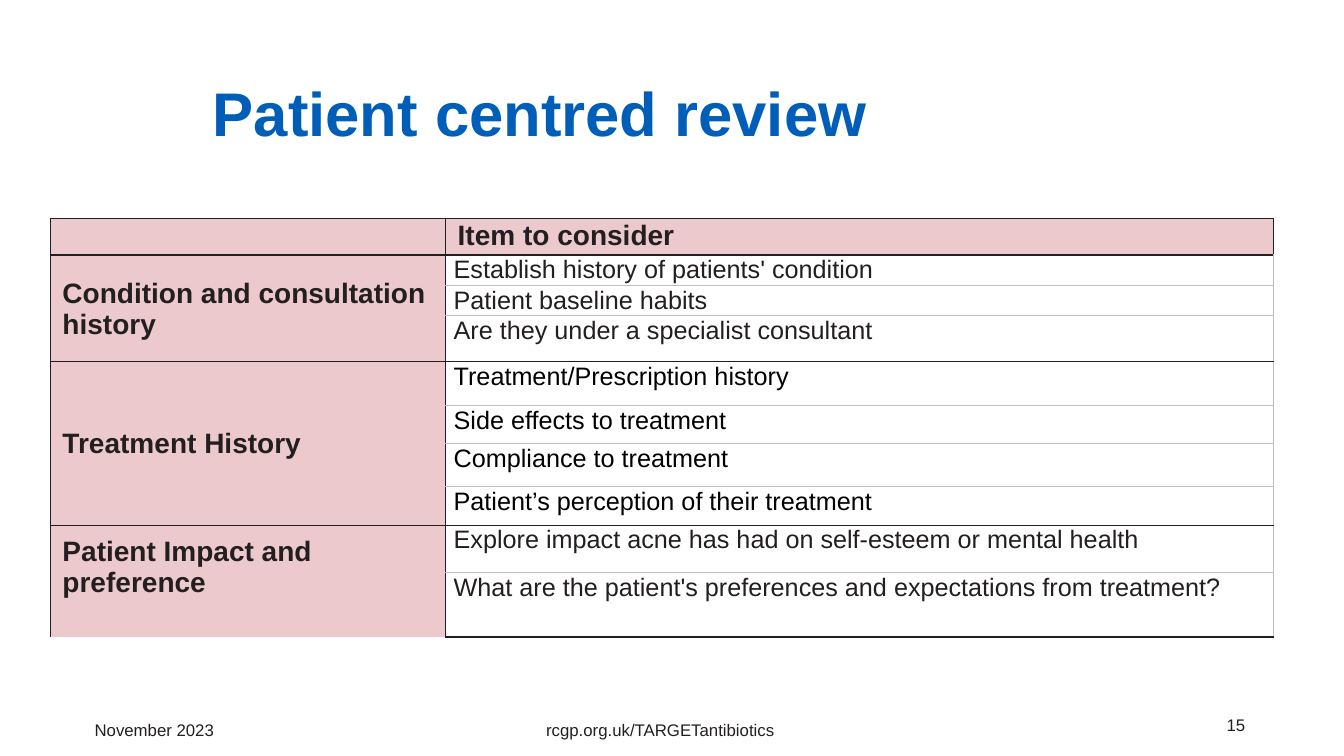
import pptx
import pptx.dml.color
import pptx.enum.text
import pptx.oxml
import pptx.oxml.ns
import pptx.util
from pptx.util import Inches

COLOURS = {
    "blue": "005EB8",
    "ink": "231F20",
    "black": "000000",
    "pink": "ECC9CD",
    "white": "FFFFFF",
    "grey": "BFBFBF",
}
ALIGN = pptx.enum.text.PP_ALIGN
ANCHOR = pptx.enum.text.MSO_ANCHOR

HEADING = "Item to consider"
# Label, colour of its items, room below the label, items with row heights
TOPICS = [
    ("Condition and consultation history", "ink", 0, [
        ("Establish history of patients' condition", 0.3),
        ("Patient baseline habits", 0.3),
        ("Are they under a specialist consultant", 0.46)]),
    ("Treatment History", "black", 0, [
        ("Treatment/Prescription history", 0.43),
        ("Side effects to treatment", 0.38),
        ("Compliance to treatment", 0.43),
        ("Patient’s perception of their treatment", 0.38)]),
    ("Patient Impact and preference", "ink", 0.28, [
        ("Explore impact acne has had on self-esteem or mental health", 0.47),
        ("What are the patient's preferences and expectations from treatment?", 0.64)]),
]
HEADER_HEIGHT = 0.36
COLUMN_WIDTHS = (3.92, 8.21)


def rgb(colour):
    return pptx.dml.color.RGBColor.from_string(COLOURS[colour])


def write(paragraph, text, size, colour, bold=False):
    run = paragraph.add_run()
    run.text = text
    run.font.name = "Arial"
    run.font.size = pptx.util.Pt(size)
    run.font.bold = bold
    run.font.color.rgb = rgb(colour)


def style_cell(cell, fill, left="ink", right="ink", top="ink", bottom="ink"):
    """Set margins, one-point borders and fill; a border of None is left out."""
    cell.margin_left = cell.margin_right = cell.margin_top = Inches(0.01)
    cell.margin_bottom = 0
    properties = cell._tc.get_or_add_tcPr()
    for side, colour in zip("LRTB", (left, right, top, bottom)):
        paint = (f'<a:solidFill><a:srgbClr val="{COLOURS[colour]}"/></a:solidFill>'
                 if colour else "<a:noFill/>")
        properties.append(pptx.oxml.parse_xml(
            f'<a:ln{side} {pptx.oxml.ns.nsdecls("a")} w="12700">{paint}</a:ln{side}>'))
    cell.fill.solid()
    cell.fill.fore_color.rgb = rgb(fill)


def write_cell(cell, text, size, colour, indent, bold=False):
    paragraph = cell.text_frame.paragraphs[0]
    properties = paragraph._p.get_or_add_pPr()
    properties.set("marL", str(Inches(indent)))
    properties.set("indent", "0")
    write(paragraph, text, size, colour, bold)


def add_title(slide, left, top, width, height):
    title = slide.shapes.title
    title.left, title.top = Inches(left), Inches(top)
    title.width, title.height = Inches(width), Inches(height)
    title.text_frame.vertical_anchor = ANCHOR.MIDDLE
    paragraph = title.text_frame.paragraphs[0]
    paragraph.alignment = ALIGN.LEFT
    paragraph.line_spacing = 0.9
    write(paragraph, "Patient centred review", 44, "blue", True)


def add_topic(table, first, label, item_colour, room_below, items):
    """Fill the rows of one topic, starting at row first."""
    last = first + len(items) - 1
    for row, (item, _) in enumerate(items, first):
        style_cell(table.cell(row, 0), "pink",
                   top="ink" if row == first else None,
                   bottom="ink" if row == last else None)
        item_cell = table.cell(row, 1)
        style_cell(item_cell, "white", right="grey",
                   top="ink" if row == first else "grey",
                   bottom="ink" if row == last else "grey")
        write_cell(item_cell, item, 18, item_colour, 0.07)

    label_cell = table.cell(first, 0)
    label_cell.merge(table.cell(last, 0))
    label_cell.vertical_anchor = ANCHOR.MIDDLE
    label_cell.margin_bottom = Inches(room_below)
    write_cell(label_cell, label, 20, "ink", 0.11, True)


def add_review_table(slide, left, top):
    heights = [HEADER_HEIGHT] + [height for topic in TOPICS for _, height in topic[-1]]
    table = slide.shapes.add_table(
        len(heights), len(COLUMN_WIDTHS), Inches(left), Inches(top),
        Inches(sum(COLUMN_WIDTHS)), Inches(sum(heights))).table
    table.first_row = table.horz_banding = False
    for column, width in zip(table.columns, COLUMN_WIDTHS):
        column.width = Inches(width)
    for row, height in zip(table.rows, heights):
        row.height = Inches(height)

    # Header row
    for column in range(len(COLUMN_WIDTHS)):
        style_cell(table.cell(0, column), "pink")
    write_cell(table.cell(0, 1), HEADING, 20, "ink", 0.11, True)

    # Topics
    first = 1
    for topic in TOPICS:
        add_topic(table, first, *topic)
        first += len(topic[-1])


def add_footer(slide, top, height):
    parts = [
        ("15", 9.5, 3, ALIGN.RIGHT, ANCHOR.TOP, 0.15),
        ("November 2023", 0.84, 3, ALIGN.LEFT, ANCHOR.MIDDLE, 0.1),
        ("rcgp.org.uk/TARGETantibiotics", 4.3, 4.5, ALIGN.CENTER, ANCHOR.MIDDLE, 0.1),
    ]
    for text, left, width, alignment, anchor, right_margin in parts:
        frame = slide.shapes.add_textbox(
            Inches(left), Inches(top), Inches(width), Inches(height)).text_frame
        frame.word_wrap = True
        frame.vertical_anchor = anchor
        frame.margin_right = Inches(right_margin)
        frame.paragraphs[0].alignment = alignment
        write(frame.paragraphs[0], text, 12, "ink")


def main():
    presentation = pptx.Presentation()
    presentation.slide_width = Inches(13.33)
    presentation.slide_height = Inches(7.5)
    slide = presentation.slides.add_slide(presentation.slide_layouts[5])
    add_title(slide, 2.01, 0.43, 10.62, 1.45)
    add_review_table(slide, 0.5, 2.17)
    add_footer(slide, 7.04, 0.4)
    presentation.save("out.pptx")


if __name__ == "__main__":
    main()
